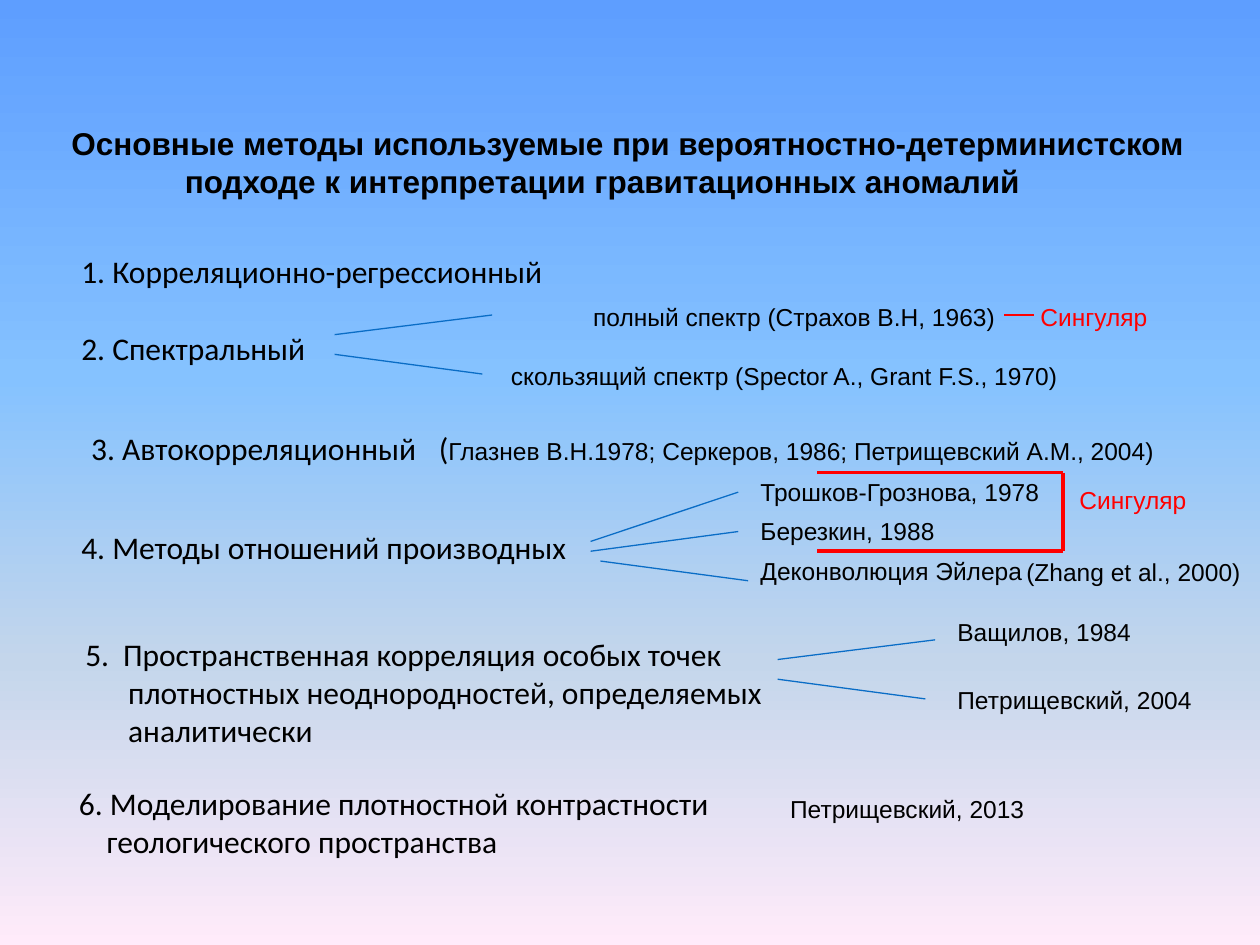
from lxml import etree
from pptx import Presentation
from pptx.dml.color import RGBColor
from pptx.enum.shapes import MSO_CONNECTOR
from pptx.enum.text import MSO_AUTO_SIZE
from pptx.oxml.ns import qn
from pptx.util import Inches, Pt

STRAIGHT = MSO_CONNECTOR.STRAIGHT
GROW = MSO_AUTO_SIZE.SHAPE_TO_FIT_TEXT

# Grid of 128 columns by 96 rows with square cells
COLUMNS, ROWS = 128, 96
CELL = 10 / COLUMNS

BLACK, RED, BLUE = "000000", "FF0000", "0A6DC6"
SKY = [(0, "5E9EFF"), (40, "85C2FF"), (70, "C4D6EB"), (100, "FFEBFA")]
HEADING = ("Calibri", 18)
SOURCE = ("Arial", 14)
LINE_HEIGHT = {14: 4.4, 18: 5.1}  # height of a one-line box, in rows
NEXT_LINE = 3.9


def color(value):
    return RGBColor.from_string(value)


def grid(cells):
    return Inches(cells * CELL)


def paint_background(slide):
    fill = slide.background.fill
    fill.gradient()
    fill.gradient_angle = 270
    stops = next(slide._element.iter(qn("a:gsLst")))
    for stop in list(stops):
        stops.remove(stop)
    for position, value in SKY:
        stop = etree.SubElement(stops, qn("a:gs"), pos=str(position * 1000))
        etree.SubElement(stop, qn("a:srgbClr"), val=value)


def add_text(slide, left, top, width, lines, style=SOURCE, tint=BLACK,
             bold=False, wrap=False, margins=(), first_indent=0):
    """Place one paragraph per line; margins are left indents in inches."""
    font_name, size = style
    height = LINE_HEIGHT[size] + NEXT_LINE * (len(lines) - 1)
    box = slide.shapes.add_textbox(grid(left), grid(top), grid(width), grid(height))
    frame = box.text_frame
    frame.word_wrap = wrap
    frame.auto_size = GROW
    frame.text = "\n".join(lines)
    for index, paragraph in enumerate(frame.paragraphs):
        if margins:
            properties = paragraph._p.get_or_add_pPr()
            properties.set("marL", str(Inches(margins[index])))
            properties.set("indent", str(Inches(first_indent if index == 0 else 0)))
        for run in paragraph.runs:
            format_run(run, font_name, size, tint, bold)
    return frame


def format_run(run, font_name, size, tint=BLACK, bold=False):
    run.font.name = font_name
    run.font.size = Pt(size)
    run.font.bold = bold
    run.font.color.rgb = color(tint)


def add_line(slide, start, end, tint=BLUE, weight=0.75):
    line = slide.shapes.add_connector(
        STRAIGHT, *(grid(cells) for cells in (*start, *end)))
    line.line.color.rgb = color(tint)
    line.line.width = Pt(weight)
    etree.SubElement(line._element.spPr, qn("a:effectLst"))


def add_branches(slide, left, top, branches):
    """Draw lines given as (x, y, x, y) offsets from the corner."""
    for x1, y1, x2, y2 in branches:
        add_line(slide, (left + x1, top + y1), (left + x2, top + y2))


def add_title(slide, left, top, width):
    add_text(slide, left, top, width,
             ["Основные методы используемые при вероятностно-детерминистском",
              "подходе к интерпретации гравитационных аномалий"],
             ("Arial", 18), bold=True, margins=(0, 0.9))


def add_correlation(slide, left, top, width):
    add_text(slide, left, top, width, ["1. Корреляционно-регрессионный"], HEADING, wrap=True)


def add_spectral(slide, left, top):
    add_text(slide, left, top + 2.8, 25.6, ["2. Спектральный"], HEADING)
    add_branches(slide, left + 27, top, [(0, 4, 16, 2), (0, 6, 15, 8)])
    add_text(slide, left + 52, top, 44.4, ["полный спектр (Страхов В.Н, 1963)"])
    add_text(slide, left + 43, top + 6, 59.8,
             ["скользящий спектр (Spector A., Grant F.S., 1970)"], margins=(0.05,))
    # Remark on the full spectrum
    add_line(slide, (left + 95, top + 2), (left + 98, top + 2), RED, 1)
    add_text(slide, left + 96.8, top, 14.2, ["Сингуляр"], tint=RED, margins=(0.05,))


def add_autocorrelation(slide, left, top, width):
    frame = add_text(slide, left, top, width, ["3. Автокорреляционный\t("], HEADING)
    paragraph = frame.paragraphs[0]
    tabs = etree.SubElement(paragraph._p.get_or_add_pPr(), qn("a:tabLst"))
    etree.SubElement(tabs, qn("a:tab"), pos=str(Inches(2.76)), algn="l")
    citation = paragraph.add_run()
    citation.text = "Глазнев В.Н.1978; Серкеров, 1986; Петрищевский А.М., 2004)"
    format_run(citation, *SOURCE)


def add_derivatives(slide, left, top):
    add_text(slide, left, top + 5, 68, ["4. Методы отношений производных"], HEADING, wrap=True)
    add_branches(slide, left + 53, top,
                 [(0, 7, 15, 2), (0, 8, 15, 6), (1, 9, 16, 11)])
    for row, width, name in [(0, 31.8, "Трошков-Грознова, 1978"),
                             (4, 20.4, "Березкин, 1988"),
                             (8.1, 30.7, "Деконволюция Эйлера")]:
        add_text(slide, left + 69, top + row - 0.2, width, [name])
    add_text(slide, left + 96, top + 8, 24.5, ["(Zhang et al., 2000)"])
    # Red bracket around the first two sources
    start, end, bottom = left + 76, left + 101, top + 8
    for first, last in [((start, top), (end, top)),
                        ((start, bottom), (end, bottom)),
                        ((end, top), (end, bottom))]:
        add_line(slide, first, last, RED, 2.25)
    add_text(slide, end + 0.4, top + 0.6, 13.6, ["Сингуляр"], tint=RED)


def add_spatial(slide, left, top):
    add_text(slide, left, top + 1.9, 105,
             ["5.\tПространственная корреляция особых точек",
              "плотностных неоднородностей, определяемых",
              "аналитически"],
             HEADING, wrap=True, margins=(0.41, 0.45, 0.45), first_indent=-0.3)
    add_branches(slide, left + 73, top, [(0, 5, 16, 3), (0, 7, 15, 9)])
    add_text(slide, left + 90, top, 20.4, ["Ващилов, 1984"])
    add_text(slide, left + 90, top + 7, 26.5, ["Петрищевский, 2004"])


def add_modelling(slide, left, top):
    add_text(slide, left, top, 72,
             ["6. Моделирование плотностной контрастности",
              "геологического пространства"],
             HEADING, wrap=True, margins=(0.06, 0.28))
    add_text(slide, left + 73, top + 1, 43, ["Петрищевский, 2013"], wrap=True)


def main():
    presentation = Presentation()
    presentation.slide_width = grid(COLUMNS)
    presentation.slide_height = grid(ROWS)
    slide = presentation.slides.add_slide(presentation.slide_layouts[6])
    paint_background(slide)
    add_title(slide, 6, 12, 117)
    add_correlation(slide, 7, 25, 66)
    add_spectral(slide, 7, 30)
    add_autocorrelation(slide, 8, 43, 112)
    add_derivatives(slide, 7, 48)
    add_spatial(slide, 6, 62)
    add_modelling(slide, 6, 79)
    presentation.save("out.pptx")


if __name__ == "__main__":
    main()
